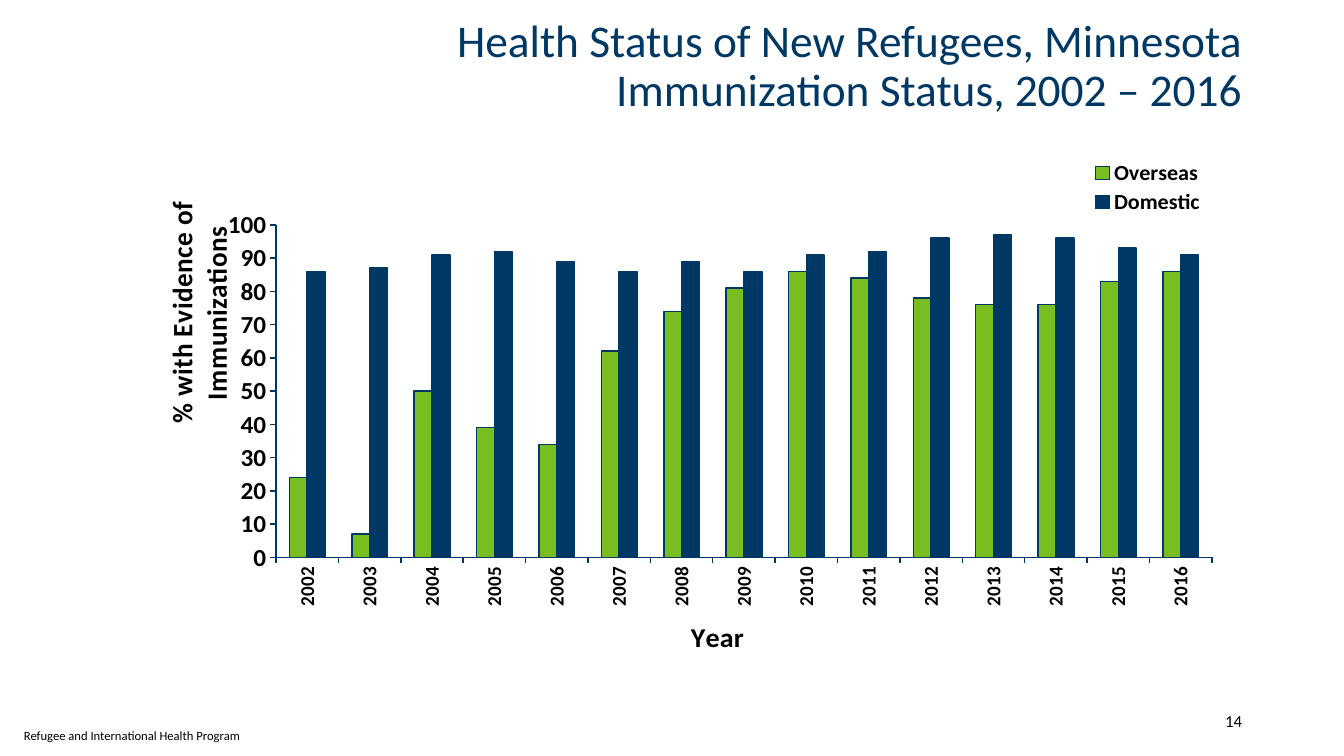
from dataclasses import dataclass

from lxml.etree import SubElement
from pptx import Presentation
from pptx.chart.data import CategoryChartData
from pptx.dml.color import RGBColor
from pptx.enum.chart import XL_CHART_TYPE as ChartType
from pptx.enum.chart import XL_LEGEND_POSITION as LegendPosition
from pptx.enum.chart import XL_TICK_MARK as TickMark
from pptx.enum.text import MSO_ANCHOR as Anchor
from pptx.enum.text import PP_ALIGN as Align
from pptx.oxml.ns import qn
from pptx.util import Emu, Pt

EMU_PER_PX = 914400 / 100.8
CHART_BOX = (98, 154, 1148, 509)


@dataclass(frozen=True)
class Theme:
    font: str = "Calibri"
    navy: RGBColor = RGBColor(0x00, 0x38, 0x65)
    green: RGBColor = RGBColor(0x78, 0xBE, 0x21)
    black: RGBColor = RGBColor(0, 0, 0)
    white: RGBColor = RGBColor(0xFF, 0xFF, 0xFF)
    title: float = 32.4
    axis_title: float = 20
    value_labels: float = 18
    legend: float = 15.8
    year_labels: float = 14
    page_number: float = 12
    footer: float = 9
    line: float = 1.07


THEME = Theme()
YEARS = [str(year) for year in range(2002, 2017)]
SERIES = {
    "Overseas": (THEME.green,
                 (24, 7, 50, 39, 34, 62, 74, 81, 86, 84, 78, 76, 76, 83, 86)),
    "Domestic": (THEME.navy,
                 (86, 87, 91, 92, 89, 86, 89, 86, 91, 92, 96, 97, 96, 93, 91)),
}


def px(length):
    return Emu(round(length * EMU_PER_PX))


def set_values(target, values):
    for name, value in values.items():
        setattr(target, name, value)


def style_font(font, size, color=THEME.black, bold=False):
    set_values(font, {"name": THEME.font, "size": Pt(size), "bold": bold})
    font.color.rgb = color


def style_line(line, color=THEME.navy):
    line.color.rgb = color
    line.width = Pt(THEME.line)


def add_text(slide, box, text, size, color=THEME.black, frame=None, paragraph=None):
    """Add a text box; frame and paragraph are dicts of format values."""
    text_frame = slide.shapes.add_textbox(*map(px, box)).text_frame
    set_values(text_frame, {"word_wrap": True, **(frame or {})})
    line = text_frame.paragraphs[0]
    line.text = text
    set_values(line, paragraph or {})
    for run in line.runs:
        style_font(run.font, size, color)


def place(element, left, top, width=None, height=None, inner=False):
    """Give a chart part a manual layout, in slide px."""
    for old in element.findall(qn("c:layout")):
        element.remove(old)
    layout = element.makeelement(qn("c:layout"))
    overlay = element.find(qn("c:overlay"))
    if overlay is None:
        element.insert(0, layout)
    else:
        overlay.addprevious(layout)
    manual = SubElement(layout, qn("c:manualLayout"))
    chart_left, chart_top, chart_width, chart_height = CHART_BOX
    entries = {"layoutTarget": "inner"} if inner else {}
    entries.update(xMode="edge", yMode="edge",
                   x=(left - chart_left) / chart_width,
                   y=(top - chart_top) / chart_height)
    if width:
        entries.update(w=width / chart_width, h=height / chart_height)
    for name, value in entries.items():
        text = value if isinstance(value, str) else f"{value:.4f}"
        SubElement(manual, qn(f"c:{name}")).set("val", text)


def turn_upward(parent):
    body = next(parent.iter(qn("a:bodyPr")))
    body.set("rot", "-5400000")
    body.set("vert", "horz")


def style_axis(axis, title, label_size, left, top):
    set_values(axis, {"major_tick_mark": TickMark.OUTSIDE,
                      "minor_tick_mark": TickMark.NONE})
    style_line(axis.format.line)
    style_font(axis.tick_labels.font, label_size, bold=True)
    axis_title = axis.axis_title
    axis_title.text_frame.text = title
    for paragraph in axis_title.text_frame.paragraphs:
        for run in paragraph.runs:
            style_font(run.font, THEME.axis_title, bold=True)
    place(axis_title._element, left, top)


def add_immunization_chart(slide):
    data = CategoryChartData()
    data.categories = YEARS
    for name, (_, values) in SERIES.items():
        data.add_series(name, values)
    chart = slide.shapes.add_chart(
        ChartType.COLUMN_CLUSTERED, *map(px, CHART_BOX), data).chart
    set_values(chart, {"has_title": False, "has_legend": True})
    style_font(chart.font, THEME.value_labels, bold=True)

    plot = chart.plots[0]
    set_values(plot, {"gap_width": 150, "overlap": 0, "vary_by_categories": False})
    for series, (color, _) in zip(plot.series, SERIES.values()):
        series.format.fill.solid()
        series.format.fill.fore_color.rgb = color
        style_line(series.format.line)
    place(chart._chartSpace.chart.plotArea, 276, 227, 936, 342, inner=True)

    years, percent = chart.category_axis, chart.value_axis
    style_axis(years, "Year", THEME.year_labels, 686, 626)
    turn_upward(years._element.find(qn("c:txPr")))
    style_axis(percent, "% with Evidence of\nImmunizations",
               THEME.value_labels, 160, 206)
    turn_upward(percent.axis_title._element)
    set_values(percent, {"minimum_scale": 0, "maximum_scale": 100,
                         "major_unit": 10, "has_major_gridlines": True})
    style_line(percent.major_gridlines.format.line, THEME.white)

    legend = chart.legend
    set_values(legend, {"position": LegendPosition.RIGHT,
                        "include_in_layout": False})
    style_font(legend.font, THEME.legend, bold=True)
    place(legend._element, 1088, 157, 120, 63)


def main():
    presentation = Presentation()
    set_values(presentation, {"slide_width": px(1344), "slide_height": px(756)})
    slide = presentation.slides.add_slide(presentation.slide_layouts[6])
    middle = {"vertical_anchor": Anchor.MIDDLE}
    add_text(slide, (14, 723, 238, 25), "Refugee and International Health Program",
             THEME.footer, frame={"word_wrap": False})
    add_text(slide, (93, 17, 1159, 101),
             "Health Status of New Refugees, Minnesota\v"
             "Immunization Status, 2002 – 2016",
             THEME.title, THEME.navy, middle,
             {"alignment": Align.RIGHT, "line_spacing": 0.9})
    add_text(slide, (1091, 701, 161, 40), "14", THEME.page_number,
             frame=middle, paragraph={"alignment": Align.RIGHT})
    add_immunization_chart(slide)
    presentation.save("out.pptx")


if __name__ == "__main__":
    main()
